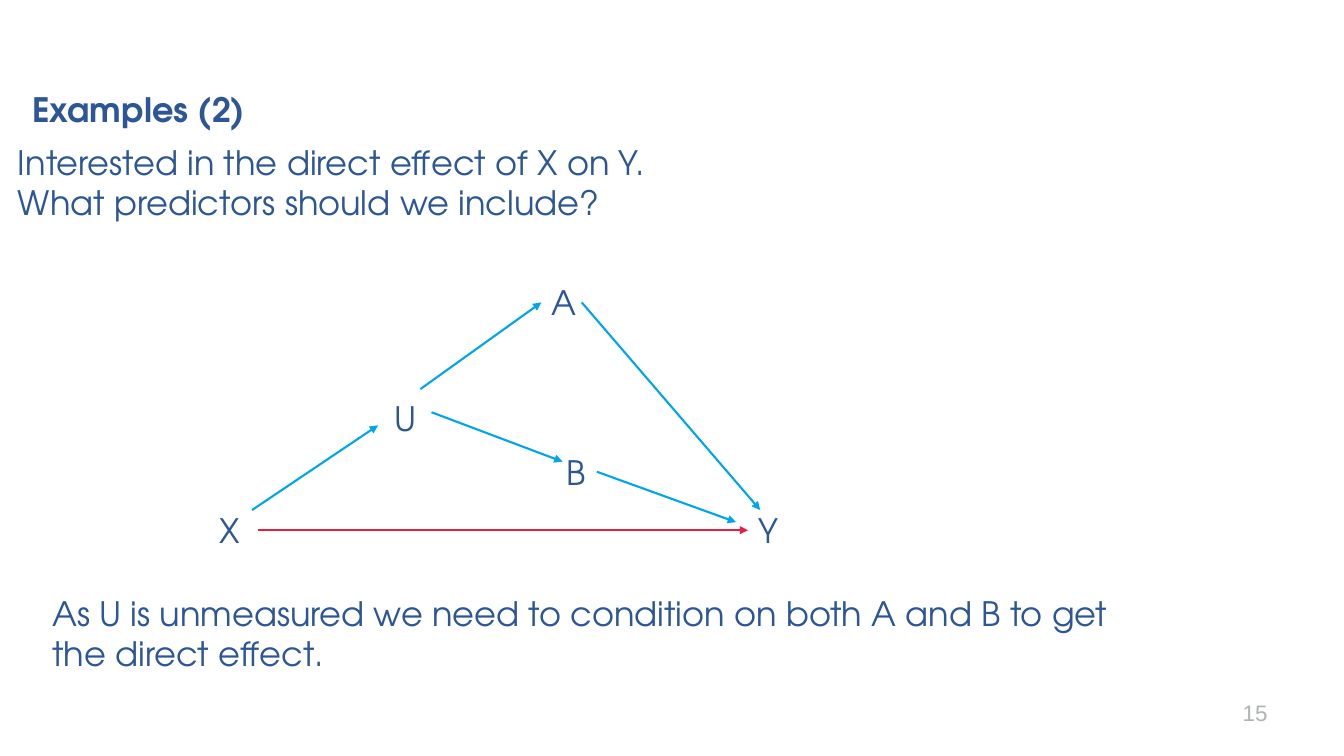
from lxml import etree
from pptx import Presentation
from pptx import util as u
from pptx.dml.color import RGBColor
from pptx.enum import shapes, text
from pptx.oxml import ns

NAVY, BLUE, RED, GREY = "2C5696", "00A6E9", "E52143", "B1B3B3"


def colour(value):
    return RGBColor.from_string(value)


class CausalSlide:
    """Holds the slide and the text and line style of the diagram."""

    font = "TeX Gyre Adventor"
    size = 24
    line_width = 1.5

    def __init__(self, presentation):
        self.slide = presentation.slides.add_slide(presentation.slide_layouts[5])

    def fill_text(self, shape, lines, bold=False, size=size, font=font, fill=NAVY,
                  align=text.PP_ALIGN.LEFT, anchor=text.MSO_ANCHOR.TOP, wrap=True):
        frame = shape.text_frame
        frame.word_wrap = wrap
        frame.auto_size = text.MSO_AUTO_SIZE.NONE
        frame.vertical_anchor = anchor
        for index, line in enumerate(lines):
            paragraph = frame.add_paragraph() if index else frame.paragraphs[0]
            paragraph.alignment = align
            paragraph.line_spacing = 1.0
            paragraph.space_before = u.Pt(0)
            run = paragraph.add_run()
            run.text = line
            run.font.name = font
            run.font.size = u.Pt(size)
            run.font.bold = bold
            run.font.color.rgb = colour(fill)

    def title(self, line, left, top, width, height):
        shape = self.slide.shapes.title
        shape.left, shape.top = u.Inches(left), u.Inches(top)
        shape.width, shape.height = u.Inches(width), u.Inches(height)
        self.fill_text(shape, [line], bold=True)

    def text_box(self, lines, left, top, width, height, **style):
        box = self.slide.shapes.add_textbox(
            u.Inches(left), u.Inches(top), u.Inches(width), u.Inches(height))
        self.fill_text(box, lines, **style)

    def node(self, letter, left, top):
        self.text_box([letter], left, top, 0.4, 0.5, wrap=False)

    def arrow(self, start, end, stroke=BLUE):
        connector = self.slide.shapes.add_connector(
            shapes.MSO_CONNECTOR.STRAIGHT, *map(u.Inches, start + end))
        connector.line.color.rgb = colour(stroke)
        connector.line.width = u.Pt(self.line_width)
        properties = connector.element.spPr
        head = etree.SubElement(properties.find(ns.qn("a:ln")), ns.qn("a:tailEnd"))
        head.set("type", "triangle")
        etree.SubElement(properties, ns.qn("a:effectLst"))


def main():
    presentation = Presentation()
    presentation.slide_width = u.Inches(13.33)
    presentation.slide_height = u.Inches(7.5)
    slide = CausalSlide(presentation)

    slide.title("Examples (2)", 0.22, 0.83, 6.04, 0.5)
    slide.text_box(["Interested in the direct effect of X on Y.",
                    "What predictors should we include?"], 0.08, 1.36, 12.33, 0.91)

    nodes = {"X": (2.08, 5.01), "U": (3.81, 3.9), "A": (5.37, 2.75),
             "B": (5.52, 4.43), "Y": (7.42, 5.01)}
    for letter, corner in nodes.items():
        slide.node(letter, *corner)

    indirect_arrows = [
        ((2.5, 5.06), (3.75, 4.22)),   # X to U
        ((4.17, 3.86), (5.37, 3)),     # U to A
        ((4.28, 4.09), (5.58, 4.58)),  # U to B
        ((5.77, 3), (7.54, 5.06)),     # A to Y
        ((5.92, 4.68), (7.3, 5.18)),   # B to Y
    ]
    for start, end in indirect_arrows:
        slide.arrow(start, end)
    slide.arrow((2.56, 5.26), (7.42, 5.26), RED)

    slide.text_box(["As U is unmeasured we need to condition on both A and B "
                    "to get the direct effect."], 0.42, 5.83, 11.08, 0.91)
    slide.text_box(["15"], 11.17, 6.87, 1.5, 0.4, size=16, font="Arial", fill=GREY,
                   align=text.PP_ALIGN.RIGHT, anchor=text.MSO_ANCHOR.MIDDLE)

    presentation.save("out.pptx")


if __name__ == "__main__":
    main()
